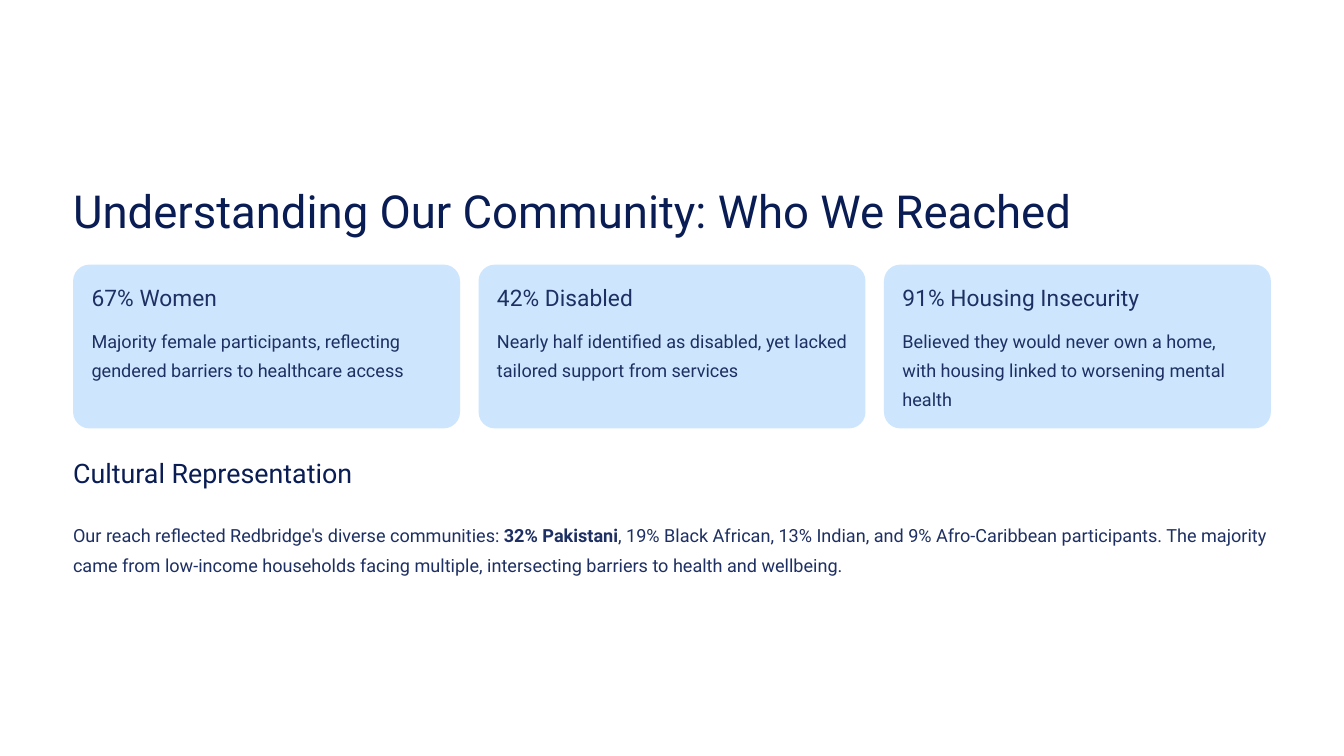
from pptx import Presentation
from pptx.dml.color import RGBColor
from pptx.enum.shapes import MSO_SHAPE
from pptx.util import Inches, Pt

WIDTH, HEIGHT = 16, 9
MARGIN = 0.87
CONTENT_W = WIDTH - 2 * MARGIN
GAP = 0.22
NAVY, INK, SKY, WHITE = "091C53", "1E3063", "CEE6FD", "FFFFFF"

CARDS = [
    ("67% Women",
     "Majority female participants, reflecting gendered barriers to healthcare access"),
    ("42% Disabled",
     "Nearly half identified as disabled, yet lacked tailored support from services"),
    ("91% Housing Insecurity",
     "Believed they would never own a home, with housing linked to worsening mental health"),
]
REACH = [
    ("Our reach reflected Redbridge's diverse communities: ", False),
    ("32% Pakistani", True),
    (", 19% Black African, 13% Indian, and 9% Afro-Caribbean participants. "
     "The majority came from low-income households facing multiple, "
     "intersecting barriers to health and wellbeing.", False),
]


def paint(color_format, hex_color):
    color_format.rgb = RGBColor.from_string(hex_color)


def add_text(slide, box, runs, size, leading, color):
    """Add one paragraph of (text, bold) runs; leading is in points."""
    tf = slide.shapes.add_textbox(*map(Inches, box)).text_frame
    tf.word_wrap = True
    tf.margin_left = tf.margin_top = tf.margin_right = tf.margin_bottom = 0
    p = tf.paragraphs[0]
    p.line_spacing = Pt(leading)
    p.font.size = Pt(size)
    p.font.name = "Roboto"
    paint(p.font.color, color)
    for text, bold in runs:
        r = p.add_run()
        r.text = text
        if bold:
            r.font.bold = True


def add_card(slide, box, heading, body):
    x, y, w, h = box
    sp = slide.shapes.add_shape(MSO_SHAPE.ROUNDED_RECTANGLE, *map(Inches, box))
    sp.adjustments[0] = 0.1
    sp.shadow.inherit = False
    sp.fill.solid()
    paint(sp.fill.fore_color, SKY)
    sp.line.fill.background()
    inner_x, inner_w = x + GAP, w - 2 * GAP
    add_text(slide, (inner_x, y + GAP, inner_w, 0.34), [(heading, False)], 19.5, 24, INK)
    add_text(slide, (inner_x, y + 0.69, inner_w, h - 0.91), [(body, False)], 15.5, 25, INK)


def add_cards(slide, box):
    """Spread the cards over equal columns."""
    x, y, w, h = box
    card_w = (w - GAP * (len(CARDS) - 1)) / len(CARDS)
    for i, (heading, body) in enumerate(CARDS):
        add_card(slide, (x + i * (card_w + GAP), y, card_w, h), heading, body)


def add_culture(slide, box):
    x, y, w, h = box
    add_text(slide, (x, y, w, 0.41), [("Cultural Representation", False)], 23, 29, NAVY)
    add_text(slide, (x, y + 0.74, w, h - 0.74), REACH, 15.5, 25, INK)


def main():
    prs = Presentation()
    prs.slide_width, prs.slide_height = Inches(WIDTH), Inches(HEIGHT)
    slide = prs.slides.add_slide(prs.slide_layouts[6])
    slide.background.fill.solid()
    paint(slide.background.fill.fore_color, WHITE)
    add_text(slide, (MARGIN, 2.15, CONTENT_W, 0.68),
             [("Understanding Our Community: Who We Reached", False)], 39, 48.5, NAVY)
    add_cards(slide, (MARGIN, 3.15, CONTENT_W, 1.95))
    add_culture(slide, (MARGIN, 5.42, CONTENT_W, 1.43))
    prs.save("out.pptx")


if __name__ == "__main__":
    main()
